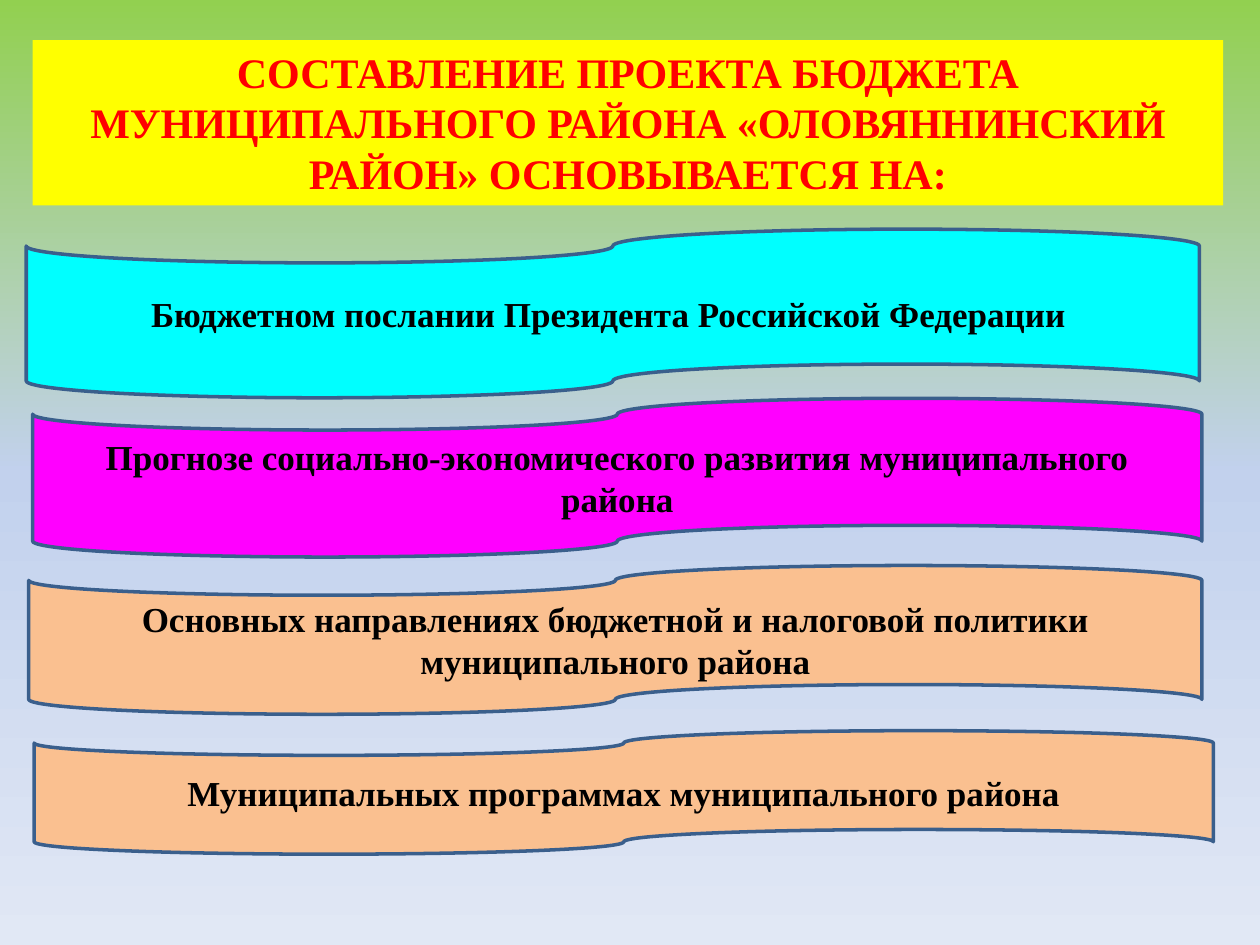
from copy import deepcopy
from dataclasses import dataclass

from pptx import Presentation
from pptx.dml.color import RGBColor
from pptx.enum.shapes import MSO_SHAPE
from pptx.enum.text import MSO_ANCHOR, PP_ALIGN
from pptx.oxml.ns import qn
from pptx.shapes.autoshape import Shape
from pptx.slide import Slide
from pptx.util import Cm, Pt

FONT = "Times New Roman"
BLACK = RGBColor(0x00, 0x00, 0x00)
RED = RGBColor(0xFF, 0x00, 0x00)
YELLOW = RGBColor(0xFF, 0xFF, 0x00)
CYAN = RGBColor(0x00, 0xFF, 0xFF)
PINK = RGBColor(0xFF, 0x00, 0xFF)
PEACH = RGBColor(0xFA, 0xC0, 0x90)
NAVY = RGBColor(0x3A, 0x5F, 0x8C)
GREEN = RGBColor(0x92, 0xD0, 0x50)
BLUE = RGBColor(0xC2, 0xD1, 0xED)
PALE = RGBColor(0xE1, 0xE8, 0xF5)


@dataclass
class Tape:
    text: str
    left: float
    top: float
    width: float
    height: float
    fill: RGBColor


TITLE = "СОСТАВЛЕНИЕ ПРОЕКТА БЮДЖЕТА МУНИЦИПАЛЬНОГО РАЙОНА «ОЛОВЯННИНСКИЙ РАЙОН» ОСНОВЫВАЕТСЯ НА:"
TAPES = [
    Tape("Бюджетном послании Президента Российской Федерации ",
         0.53, 4.62, 23.65, 3.4, CYAN),
    Tape("Прогнозе социально-экономического развития муниципального района",
         0.66, 8.03, 23.57, 3.2, PINK),
    Tape("Основных направлениях бюджетной и налоговой политики муниципального района",
         0.58, 11.4, 23.65, 3, PEACH),
    Tape("Муниципальных программах муниципального района",
         0.69, 14.73, 23.77, 2.49, PEACH),
]


def paint_back(slide: Slide) -> None:
    fill = slide.background.fill
    fill.gradient()
    fill.gradient_angle = 270
    stops = slide._element.find(".//" + qn("a:gsLst"))
    stops.insert(1, deepcopy(stops[0]))
    for stop, place, color in zip(fill.gradient_stops, (0, 0.5, 1), (GREEN, BLUE, PALE)):
        stop.position = place
        stop.color.rgb = color


def write(shape: Shape, text: str, size: int, color: RGBColor) -> None:
    frame = shape.text_frame
    frame.word_wrap = True
    frame.text = text
    line = frame.paragraphs[0]
    line.alignment = PP_ALIGN.CENTER
    font = line.runs[0].font
    font.name = FONT
    font.size = Pt(size)
    font.bold = True
    font.color.rgb = color


def add_title(slide: Slide) -> None:
    box = slide.shapes.add_textbox(Cm(0.66), Cm(0.81), Cm(24), Cm(3.33))
    box.fill.solid()
    box.fill.fore_color.rgb = YELLOW
    write(box, TITLE, 24, RED)


def add_tape(slide: Slide, tape: Tape) -> None:
    shape = slide.shapes.add_shape(
        MSO_SHAPE.FLOWCHART_PUNCHED_TAPE,
        Cm(tape.left), Cm(tape.top), Cm(tape.width), Cm(tape.height))
    shape.shadow.inherit = False
    shape.fill.solid()
    shape.fill.fore_color.rgb = tape.fill
    shape.line.color.rgb = NAVY
    shape.line.width = Pt(2)
    shape.text_frame.vertical_anchor = MSO_ANCHOR.MIDDLE
    write(shape, tape.text, 20, BLACK)


def main() -> None:
    deck = Presentation()
    deck.slide_width = Cm(25.4)
    deck.slide_height = Cm(19.05)
    slide = deck.slides.add_slide(deck.slide_layouts[6])
    paint_back(slide)
    add_title(slide)
    for tape in TAPES:
        add_tape(slide, tape)
    deck.save("out.pptx")


if __name__ == "__main__":
    main()
